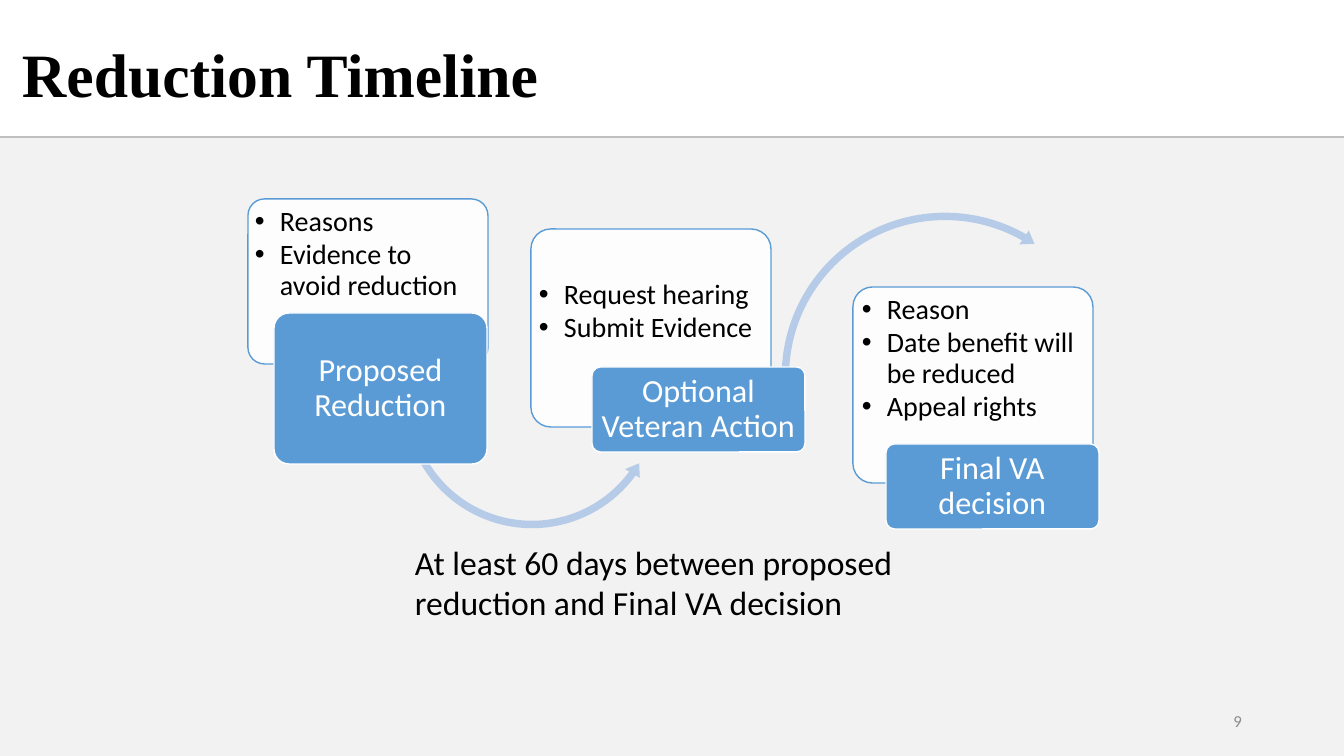
from dataclasses import dataclass
from typing import NamedTuple, Optional

from lxml.etree import SubElement
from pptx import Presentation
from pptx.dml.color import RGBColor
from pptx.enum.shapes import MSO_CONNECTOR, MSO_SHAPE
from pptx.enum.text import MSO_ANCHOR, PP_ALIGN
from pptx.oxml.ns import qn
from pptx.shapes.autoshape import Shape
from pptx.slide import Slide
from pptx.util import Emu, Pt

EMU_PER_PX = 914400 / 100.8


def px(length: float) -> Emu:
    return Emu(round(length * EMU_PER_PX))


@dataclass(frozen=True)
class Theme:
    body_font: str = "Calibri"
    title_font: str = "Times New Roman"
    white: str = "FFFFFF"
    black: str = "000000"
    band: str = "F2F2F2"
    rule: str = "BFBFBF"
    accent: str = "5B9BD5"
    arrow: str = "B5CBE7"
    muted: str = "8C8C8C"
    title_size: int = 44
    note_size: int = 24
    label_size: int = 23
    bullet_size: int = 20
    number_size: int = 12


THEME = Theme()


class Box(NamedTuple):
    left: int
    top: int
    width: int
    height: int

    def inset(self, gap: int) -> "Box":
        return Box(self.left + gap, self.top + gap, self.width - 2 * gap, self.height - 2 * gap)

    def emu(self) -> list[Emu]:
        return [px(length) for length in self]


@dataclass(frozen=True)
class TextStyle:
    size: int
    color: str = THEME.black
    font: str = THEME.body_font
    bold: bool = False
    align: PP_ALIGN = PP_ALIGN.LEFT
    anchor: MSO_ANCHOR = MSO_ANCHOR.TOP
    margins: tuple[int, int] = (10, 5)
    line_spacing: float = 1.0
    bulleted: bool = False


TITLE = TextStyle(THEME.title_size, font=THEME.title_font, bold=True,
                  anchor=MSO_ANCHOR.MIDDLE, line_spacing=0.9)
BULLETS = TextStyle(THEME.bullet_size, margins=(4, 4), line_spacing=0.9, bulleted=True)
LABEL = TextStyle(THEME.label_size, THEME.white, align=PP_ALIGN.CENTER,
                  anchor=MSO_ANCHOR.MIDDLE, margins=(5, 3), line_spacing=0.9)
NOTE = TextStyle(THEME.note_size)
NUMBER = TextStyle(THEME.number_size, THEME.muted, align=PP_ALIGN.RIGHT, anchor=MSO_ANCHOR.MIDDLE)


@dataclass(frozen=True)
class Arrow:
    kind: MSO_SHAPE
    box: Box
    adjustments: tuple[float, ...]


@dataclass(frozen=True)
class Step:
    label: str
    points: list[str]
    panel: Box
    points_box: Box
    label_box: Box
    arrow: Optional[Arrow] = None


STEPS = [
    Step("Proposed Reduction", ["Reasons", "Evidence to avoid reduction"],
         Box(248, 199, 240, 165), Box(251, 203, 232, 122), Box(274, 313, 213, 151),
         Arrow(MSO_SHAPE.LEFT_CIRCULAR_ARROW, Box(399, 267, 266, 266),
               (0.028, 3.355, 21.7, 90.835, 0.032))),
    Step("Optional Veteran Action", ["Request hearing", "Submit Evidence"],
         Box(531, 229, 240, 198), Box(535, 276, 231, 146), Box(592, 367, 213, 85),
         Arrow(MSO_SHAPE.CIRCULAR_ARROW, Box(777, 208, 336, 336),
               (0.022, 2.623, 179.838, 109.971, 0.025))),
    Step("Final VA decision", ["Reason", "Date benefit will be reduced", "Appeal rights"],
         Box(853, 287, 240, 196), Box(858, 291, 231, 145), Box(886, 444, 213, 85)),
]


def add_text(slide: Slide, box: Box, lines: list[str], style: TextStyle) -> None:
    frame = slide.shapes.add_textbox(*box.emu()).text_frame
    frame.word_wrap = True
    frame.vertical_anchor = style.anchor
    frame.margin_left = frame.margin_right = px(style.margins[0])
    frame.margin_top = frame.margin_bottom = px(style.margins[1])
    for index, line in enumerate(lines):
        paragraph = frame.paragraphs[0] if index == 0 else frame.add_paragraph()
        paragraph.text = line
        paragraph.alignment = style.align
        paragraph.line_spacing = style.line_spacing
        if style.bulleted:
            paragraph.level = 1
            paragraph.space_after = Pt(2.5)
            properties = paragraph._p.get_or_add_pPr()
            properties.set("marL", str(px(25)))
            properties.set("indent", str(px(-25)))
            SubElement(properties, qn("a:buFont"), typeface="Arial")
            SubElement(properties, qn("a:buChar"), char="•")
        paragraph.font.name = style.font
        paragraph.font.size = Pt(style.size)
        paragraph.font.bold = style.bold
        paragraph.font.color.rgb = RGBColor.from_string(style.color)


def add_filled(slide: Slide, kind: MSO_SHAPE, box: Box, fill: str,
               line: Optional[str] = None, adjustments: tuple[float, ...] = ()) -> Shape:
    shape = slide.shapes.add_shape(kind, *box.emu())
    shape.shadow.inherit = False
    shape.fill.solid()
    shape.fill.fore_color.rgb = RGBColor.from_string(fill)
    if line:
        shape.line.color.rgb = RGBColor.from_string(line)
        shape.line.width = Pt(1)
    else:
        shape.line.fill.background()
    for index, value in enumerate(adjustments):
        shape.adjustments[index] = value
    return shape


def add_rule(slide: Slide, top: int, width: int) -> None:
    rule = slide.shapes.add_connector(MSO_CONNECTOR.STRAIGHT, px(0), px(top), px(width), px(top))
    rule.line.color.rgb = RGBColor.from_string(THEME.rule)
    rule.line.width = Pt(1.5)
    SubElement(rule._element.spPr, qn("a:effectLst"))


def add_step(slide: Slide, step: Step) -> None:
    rounded = MSO_SHAPE.ROUNDED_RECTANGLE
    panel = add_filled(slide, rounded, step.panel, THEME.white, THEME.accent, (0.1,))
    panel_color = panel._element.spPr.find(qn("a:solidFill"))[0]
    SubElement(panel_color, qn("a:alpha"), val="90000")
    add_text(slide, step.points_box, step.points, BULLETS)
    if step.arrow:
        add_filled(slide, step.arrow.kind, step.arrow.box, THEME.arrow,
                   adjustments=step.arrow.adjustments)
    add_filled(slide, rounded, step.label_box, THEME.accent, THEME.white, (0.1,))
    corner_gap = round(step.label_box.height * 0.03)
    add_text(slide, step.label_box.inset(corner_gap), [step.label], LABEL)


def main() -> None:
    presentation = Presentation()
    presentation.slide_width, presentation.slide_height = px(1344), px(756)
    slide = presentation.slides.add_slide(presentation.slide_layouts[6])

    # Background band and rule
    add_filled(slide, MSO_SHAPE.RECTANGLE, Box(0, 138, 1344, 618), THEME.band)
    add_rule(slide, 137, 1344)

    # Timeline steps
    for step in STEPS:
        add_step(slide, step)

    # Page number, title and note
    add_text(slide, Box(950, 701, 302, 40), ["9"], NUMBER)
    add_text(slide, Box(12, 5, 1159, 146), ["Reduction Timeline"], TITLE)
    add_text(slide, Box(405, 537, 534, 92),
             ["At least 60 days between proposed reduction and Final VA decision"], NOTE)

    presentation.save("out.pptx")


if __name__ == "__main__":
    main()
